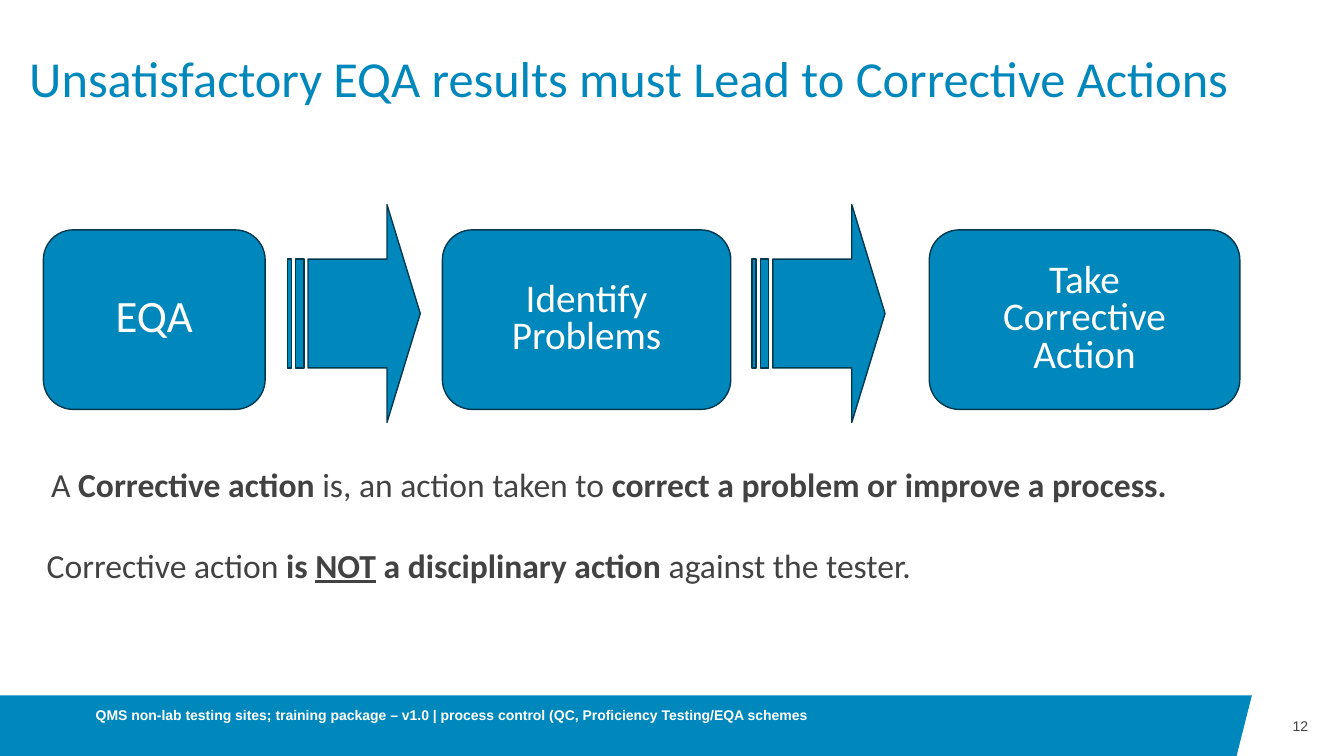
from pptx import Presentation
from pptx.dml.color import RGBColor
from pptx.enum.shapes import MSO_SHAPE
from pptx.enum.text import MSO_ANCHOR, MSO_AUTO_SIZE, PP_ALIGN
from pptx.util import Pt

ROUNDED = MSO_SHAPE.ROUNDED_RECTANGLE
ARROW = MSO_SHAPE.STRIPED_RIGHT_ARROW
TOP, MIDDLE = MSO_ANCHOR.TOP, MSO_ANCHOR.MIDDLE
LEFT, CENTER, RIGHT = PP_ALIGN.LEFT, PP_ALIGN.CENTER, PP_ALIGN.RIGHT
NO_FIT = MSO_AUTO_SIZE.NONE

COLORS = {"blue": "0087BC", "outline": "00384F", "gray": "424242", "white": "FFFFFF"}
STEPS = [
    (31, 158.4, 32, ["EQA"]),
    (316, 206, 28, ["Identify", "Problems"]),
    (663.8, 221.8, 28, ["Take", "Corrective", "Action"]),
]
ARROW_LEFTS = [205.2, 537.2]
STATEMENTS = [
    (8.6, 0, [("A ", False, False), ("Corrective action ", True, False),
              ("is, an action taken to ", False, False),
              ("correct a problem or improve a process.", True, False)]),
    (5.4, 29, [("Corrective action ", False, False), ("is ", True, False),
               ("NOT", True, True), (" a disciplinary action ", True, False),
               ("against the tester.", False, False)]),
]


def color(name):
    return RGBColor.from_string(COLORS[name])


def set_font(p, size, color_name, name="Calibri", bold=None):
    font = p.font
    font.name, font.size, font.bold = name, Pt(size), bold
    font.color.rgb = color(color_name)


def set_frame(tf, anchor, insets=(0, 0, 0, 0)):
    tf.word_wrap = True
    tf.auto_size = NO_FIT
    tf.vertical_anchor = anchor
    tf.margin_left, tf.margin_top, tf.margin_right, tf.margin_bottom = map(Pt, insets)


def add_title(s, text):
    title = s.shapes.title
    title.left, title.top, title.width, title.height = Pt(20.9), Pt(20.2), Pt(939), Pt(75.6)
    set_frame(title.text_frame, MIDDLE)
    p = title.text_frame.paragraphs[0]
    p.text, p.alignment, p.line_spacing = text, LEFT, 0.9
    set_font(p, 36, "blue")


def add_footer_bar(s):
    builder = s.shapes.build_freeform(0, Pt(496.8))
    builder.add_line_segments([(Pt(894.2), Pt(496.8)), (Pt(883.3), Pt(540)), (0, Pt(540))])
    bar = builder.convert_to_shape()
    bar.shadow.inherit = False
    bar.fill.solid()
    bar.fill.fore_color.rgb = color("blue")
    bar.line.fill.background()


def add_flow_shape(s, kind, left, top, width, height):
    sp = s.shapes.add_shape(kind, Pt(left), Pt(top), Pt(width), Pt(height))
    sp.shadow.inherit = False
    sp.fill.solid()
    sp.fill.fore_color.rgb = color("blue")
    sp.line.color.rgb = color("outline")
    sp.line.width = Pt(1)
    return sp


def add_step(s, left, width, size, lines):
    sp = add_flow_shape(s, ROUNDED, left, 164.2, width, 128.2)
    tf = sp.text_frame
    set_frame(tf, MIDDLE, (7.2, 3.6, 7.2, 3.6))
    tf.text = "\n".join(lines)
    for p in tf.paragraphs:
        p.alignment, p.line_spacing = CENTER, 0.8
        set_font(p, size, "white")


def add_arrow(s, left):
    sp = add_flow_shape(s, ARROW, left, 146.2, 95, 155.5)
    sp.adjustments[0], sp.adjustments[1] = 0.5, 0.25


def add_label(s, box, text, color_name, align, insets=(0, 0, 0, 0), bold=None):
    tf = s.shapes.add_textbox(*map(Pt, box)).text_frame
    set_frame(tf, MIDDLE, insets)
    p = tf.paragraphs[0]
    p.text, p.alignment = text, align
    set_font(p, 10, color_name, "Arial", bold)


def add_statements(s):
    tf = s.shapes.add_textbox(Pt(20.9), Pt(327.6), Pt(918.7), Pt(94.3)).text_frame
    set_frame(tf, TOP, (7.2, 3.6, 7.2, 3.6))
    for i, (indent, gap, runs) in enumerate(STATEMENTS):
        p = tf.add_paragraph() if i else tf.paragraphs[0]
        p.space_before = Pt(gap)
        p._p.get_or_add_pPr().set("marL", str(Pt(indent)))
        set_font(p, 24, "gray")
        for text, bold, underline in runs:
            r = p.add_run()
            r.text, r.font.bold, r.font.underline = text, bold, underline


def main():
    prs = Presentation()
    prs.slide_width, prs.slide_height = Pt(960), Pt(540)
    s = prs.slides.add_slide(prs.slide_layouts[5])
    add_footer_bar(s)
    add_title(s, "Unsatisfactory EQA results must Lead to Corrective Actions")
    for step in STEPS:
        add_step(s, *step)
    for left in ARROW_LEFTS:
        add_arrow(s, left)
    add_label(s, (68.4, 496.8, 576, 39.6),
              "QMS non-lab testing sites; training package – v1.0 | process control "
              "(QC, Proficiency Testing/EQA schemes",
              "white", LEFT, (0, 0, 0, 12), True)
    add_label(s, (894.2, 496.8, 40.3, 43.2), "12", "gray", RIGHT)
    add_statements(s)
    prs.save("out.pptx")


if __name__ == "__main__":
    main()
